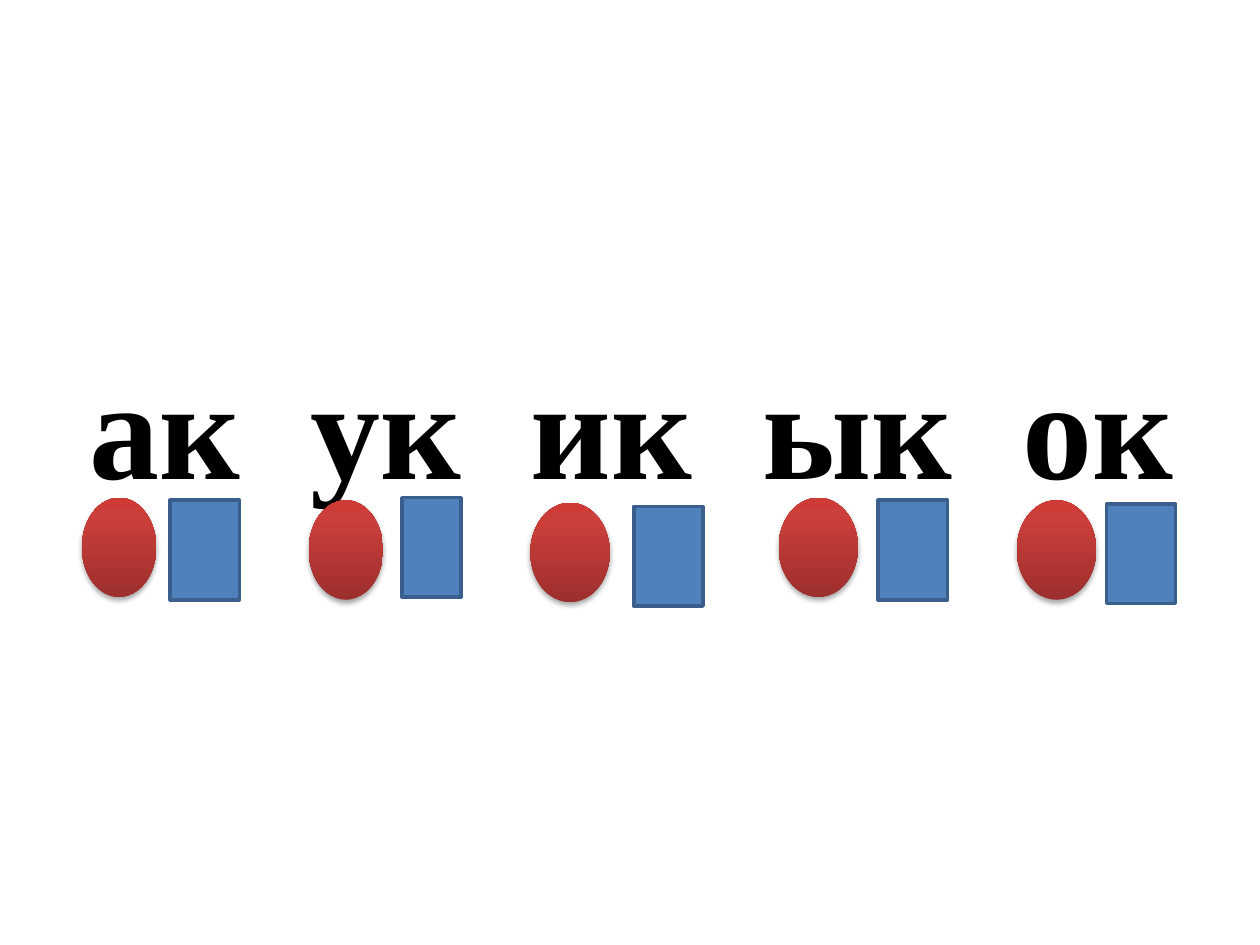
import pptx
import pptx.util
import pptx.dml.color
import pptx.enum.shapes
import pptx.enum.text
import pptx.oxml
import pptx.oxml.ns

Inches = pptx.util.Inches
Pt = pptx.util.Pt
RGB = pptx.dml.color.RGBColor
Kind = pptx.enum.shapes.MSO_SHAPE
qn = pptx.oxml.ns.qn
NS = pptx.oxml.ns.nsdecls("a")

BLACK = RGB(0x00, 0x00, 0x00)
WHITE = RGB(0xFF, 0xFF, 0xFF)
BLUE = RGB(0x4F, 0x81, 0xBD)
NAVY = RGB(0x3A, 0x5F, 0x8C)
REDS = [
    (0, RGB(0x9C, 0x2F, 0x2D)),
    (80, RGB(0xCB, 0x3E, 0x3A)),
    (100, RGB(0xCE, 0x3B, 0x37)),
]
HIGH = 0.79

deck = pptx.Presentation()
deck.slide_width = Inches(10)
deck.slide_height = Inches(7.5)
slide = deck.slides.add_slide(deck.slide_layouts[5])
slide.background.fill.solid()
slide.background.fill.fore_color.rgb = WHITE

title = slide.shapes.title
title.left, title.top = Inches(0.51), Inches(2.74)
title.width, title.height = Inches(9), Inches(1.25)
frame = title.text_frame
frame.vertical_anchor = pptx.enum.text.MSO_ANCHOR.MIDDLE
line = frame.paragraphs[0]
line.alignment = pptx.enum.text.PP_ALIGN.CENTER


def add_run(text):
    run = line.add_run()
    run.text = text
    run.font.name = "Times New Roman"
    run.font.size = Pt(80)
    run.font.bold = True
    run.font.color.rgb = BLACK
    return run


def add_shape(kind, left, top, width):
    shape = slide.shapes.add_shape(
        kind, Inches(left), Inches(top), Inches(width), Inches(HIGH))
    shape.shadow.inherit = False
    return shape


pairs = [
    ("ак", (0.65, 3.95, 0.59), (1.35, 3.97, 0.55)),
    ("ук", (2.45, 3.97, 0.59), (3.19, 3.95, 0.47)),
    ("ик", (4.21, 3.99, 0.63), (5.03, 4.02, 0.55)),
    ("ык", (6.18, 3.95, 0.63), (6.97, 3.97, 0.55)),
    ("ок", (8.07, 3.97, 0.63), (8.78, 4, 0.55)),
]

for count, (word, vowel, stop) in enumerate(pairs):
    if count:
        gap = add_run(" ")
        gap.font._element.set("spc", "2000")
    add_run(word)

    oval = add_shape(Kind.OVAL, *vowel)
    oval.line.fill.background()
    oval.fill.gradient()
    oval.fill.gradient_angle = 90
    props = oval.element.spPr
    stops = props.find(qn("a:gradFill")).find(qn("a:gsLst"))
    for old in list(stops):
        stops.remove(old)
    for place, red in REDS:
        stops.append(pptx.oxml.parse_xml(
            f'<a:gs {NS} pos="{place * 1000}"><a:srgbClr val="{red}"/></a:gs>'))
    props.find(qn("a:effectLst")).append(pptx.oxml.parse_xml(
        f'<a:outerShdw {NS} blurRad="{Pt(3.1)}" dist="{Pt(1.8)}" '
        'dir="5400000" rotWithShape="0"><a:srgbClr val="000000">'
        '<a:alpha val="35000"/></a:srgbClr></a:outerShdw>'))

    block = add_shape(Kind.RECTANGLE, *stop)
    block.fill.solid()
    block.fill.fore_color.rgb = BLUE
    block.line.color.rgb = NAVY
    block.line.width = Pt(2)

deck.save("out.pptx")
